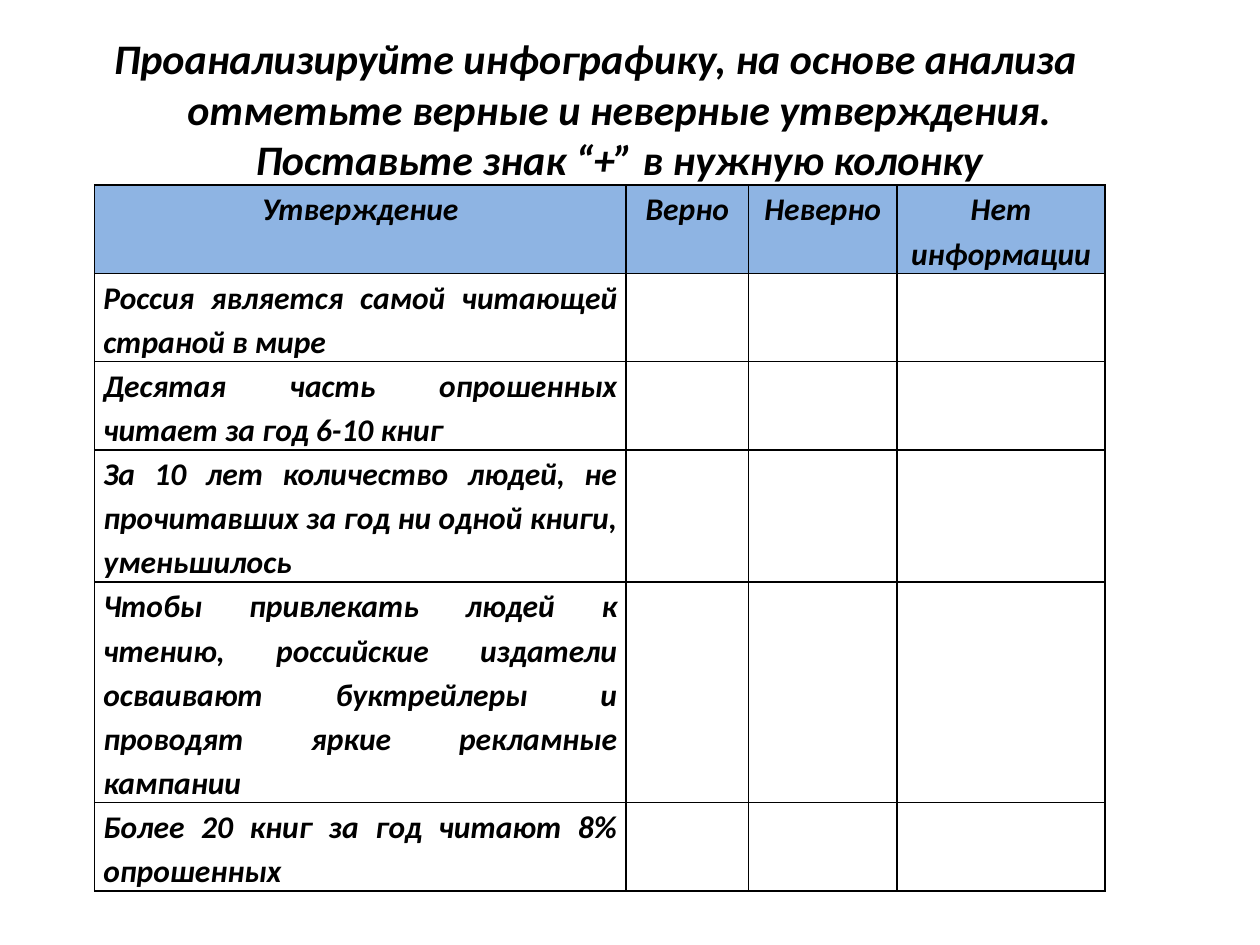
import pptx
import pptx.util
import pptx.dml.color
import pptx.enum.text
import pptx.oxml
import pptx.oxml.ns

Inches = pptx.util.Inches
Pt = pptx.util.Pt
RGBColor = pptx.dml.color.RGBColor
Align = pptx.enum.text.PP_ALIGN

BLACK = RGBColor(0x00, 0x00, 0x00)
HEADER_BLUE = RGBColor(0x8E, 0xB4, 0xE3)
FONT_NAME = "Calibri"
LEFT = 0.75
TABLE_TOP = 1.47
LINE_HEIGHT = 0.35
HANGING = 0.38
COLUMN_WIDTHS = [4.22, 0.97, 1.18, 1.65]
TITLE = ("Проанализируйте инфографику, на основе анализа отметьте верные "
         "и неверные утверждения. Поставьте знак “+” в нужную колонку")
HEADERS = ["Утверждение", "Верно", "Неверно", "Нет информации"]
HEADER_LINES = 2
STATEMENTS = [
    ("Россия является самой читающей страной в мире", 2),
    ("Десятая часть опрошенных читает за год 6-10 книг", 2),
    ("За 10 лет количество людей, не прочитавших за год ни одной книги, "
     "уменьшилось ", 3),
    ("Чтобы привлекать людей к чтению, российские издатели осваивают "
     "буктрейлеры и проводят яркие рекламные кампании ", 5),
    ("Более 20 книг за год читают 8% опрошенных", 2),
]


def add_text(paragraph, text, size, alignment):
    paragraph.alignment = alignment
    run = paragraph.add_run()
    run.text = text
    font = run.font
    font.name = FONT_NAME
    font.size = Pt(size)
    font.bold = font.italic = True
    font.color.rgb = BLACK


def add_title(slide):
    box = slide.shapes.add_textbox(
        Inches(LEFT), Inches(0.21), Inches(7.95), Inches(1.5))
    box.text_frame.word_wrap = True
    paragraph = box.text_frame.paragraphs[0]
    add_text(paragraph, TITLE, 24, Align.CENTER)
    properties = paragraph._p.get_or_add_pPr()
    properties.set("marL", str(Inches(HANGING)))
    properties.set("indent", str(-Inches(HANGING)))


def add_borders(cell):
    properties = cell._tc.get_or_add_tcPr()
    namespace = pptx.oxml.ns.nsdecls("a")
    for position, side in enumerate(("lnL", "lnR", "lnT", "lnB")):
        border = pptx.oxml.parse_xml(
            f'<a:{side} {namespace} w="{Pt(1)}"><a:solidFill>'
            f'<a:srgbClr val="{BLACK}"/></a:solidFill></a:{side}>')
        properties.insert(position, border)


def style_cell(cell, is_header):
    cell.margin_left = cell.margin_right = Inches(0.07)
    cell.margin_top = cell.margin_bottom = 0
    if is_header:
        cell.fill.solid()
        cell.fill.fore_color.rgb = HEADER_BLUE
    else:
        cell.fill.background()
    add_borders(cell)


def fill_cell(cell, text, alignment):
    paragraph = cell.text_frame.paragraphs[0]
    paragraph.line_spacing = 1.15
    add_text(paragraph, text, 18, alignment)


def add_statement_table(slide):
    line_counts = [HEADER_LINES] + [lines for _, lines in STATEMENTS]
    table = slide.shapes.add_table(
        len(line_counts), len(HEADERS), Inches(LEFT), Inches(TABLE_TOP),
        Inches(sum(COLUMN_WIDTHS)),
        Inches(sum(line_counts) * LINE_HEIGHT)).table
    table.horz_banding = False
    for column, width in zip(table.columns, COLUMN_WIDTHS):
        column.width = Inches(width)
    for index, (row, lines) in enumerate(zip(table.rows, line_counts)):
        row.height = Inches(lines * LINE_HEIGHT)
        for cell in row.cells:
            style_cell(cell, index == 0)
    for index, header in enumerate(HEADERS):
        fill_cell(table.cell(0, index), header, Align.CENTER)
    for index, (statement, _) in enumerate(STATEMENTS, start=1):
        fill_cell(table.cell(index, 0), statement, Align.JUSTIFY)


def main():
    presentation = pptx.Presentation()
    presentation.slide_width = Inches(10)
    presentation.slide_height = Inches(7.5)
    slide = presentation.slides.add_slide(presentation.slide_layouts[6])
    add_title(slide)
    add_statement_table(slide)
    presentation.save("out.pptx")


if __name__ == "__main__":
    main()
